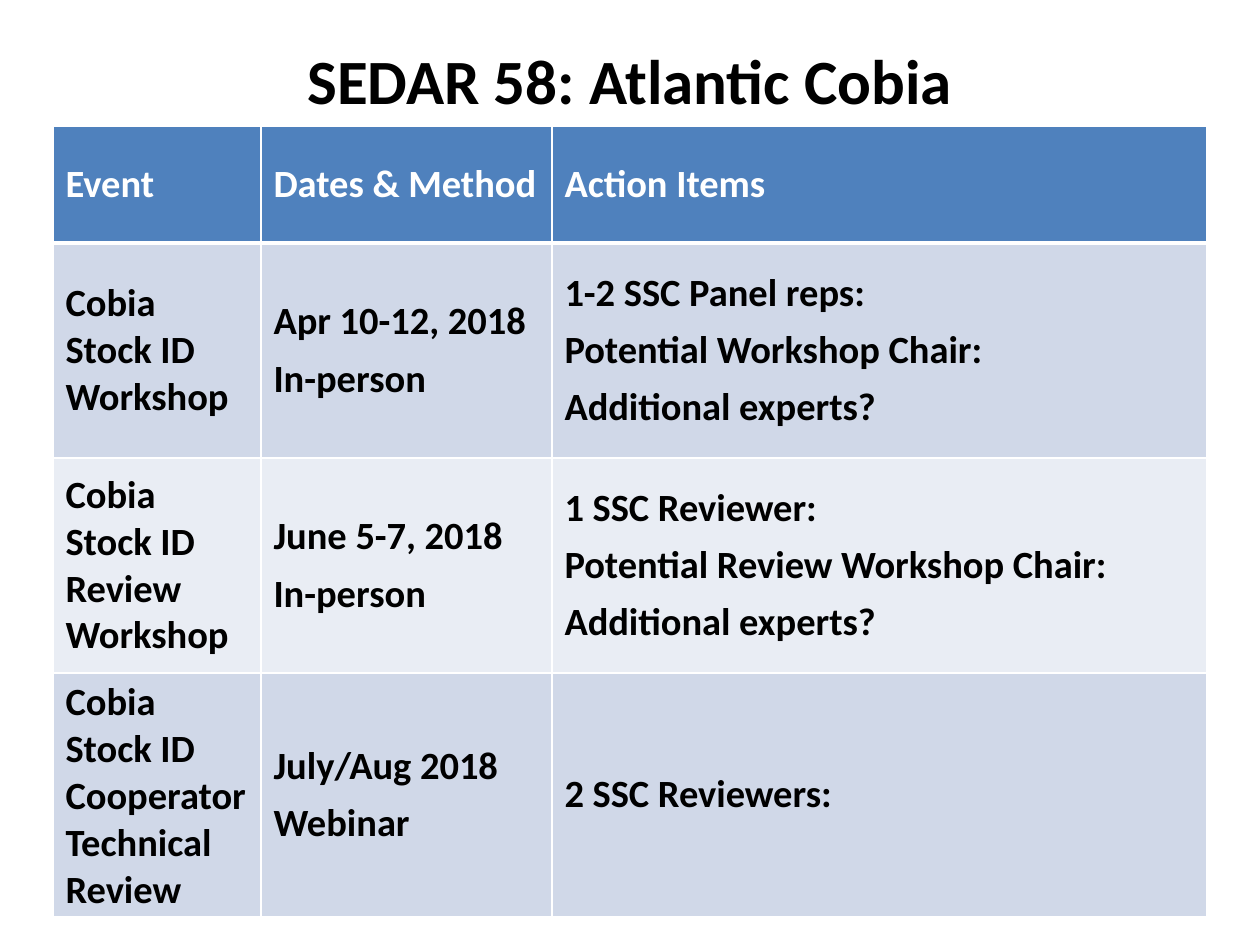
from dataclasses import dataclass

from lxml import etree
from pptx import Presentation
from pptx.dml.color import RGBColor
from pptx.enum.text import MSO_ANCHOR, PP_ALIGN
from pptx.oxml.ns import qn
from pptx.util import Emu, Pt

MIDDLE = MSO_ANCHOR.MIDDLE
CENTER, LEFT = PP_ALIGN.CENTER, PP_ALIGN.LEFT
EMU_PER_PX = 914400 // 126


@dataclass(frozen=True)
class Theme:
    font: str = "Calibri"
    title_size: int = 36
    table_size: int = 22
    text: str = "000000"
    header_text: str = "FFFFFF"
    header_fill: str = "4F81BD"
    bands: tuple = ("D0D8E8", "E9EDF4")
    border: str = "FFFFFF"
    border_width: int = 1
    header_rule: int = 3
    item_gap: int = 6


THEME = Theme()

TITLE = "SEDAR 58: Atlantic Cobia"
COLUMN_WIDTHS = (208, 291, 655)
ROW_HEIGHTS = (117, 215, 215, 215)
HEADER = ("Event", "Dates & Method", "Action Items")
EVENTS = (
    ("Cobia Stock ID Workshop",
     ("Apr 10-12, 2018", "In-person"),
     ("1-2 SSC Panel reps:", "Potential Workshop Chair:", "Additional experts?")),
    ("Cobia Stock ID Review Workshop",
     ("June 5-7, 2018", "In-person"),
     ("1 SSC Reviewer:", "Potential Review Workshop Chair:", "Additional experts?")),
    ("Cobia Stock ID Cooperator Technical Review",
     ("July/Aug 2018", "Webinar"),
     ("2 SSC Reviewers:",)),
)


def px(n):
    return Emu(n * EMU_PER_PX)


def write_lines(tf, lines, size, color, align=LEFT, gap=0):
    for i, line in enumerate(lines):
        p = tf.paragraphs[0] if i == 0 else tf.add_paragraph()
        p.alignment = align
        p.space_after = Pt(gap)
        r = p.add_run()
        r.text = line
        r.font.name = THEME.font
        r.font.size = Pt(size)
        r.font.bold = True
        r.font.color.rgb = RGBColor.from_string(color)


def add_title(s):
    sp = s.shapes.add_textbox(0, 0, px(1260), px(158))
    tf = sp.text_frame
    tf.word_wrap = True
    tf.vertical_anchor = MIDDLE
    write_lines(tf, [TITLE], THEME.title_size, THEME.text, CENTER)


def set_borders(cell, **widths):
    """Draw the L, R, T and B edges; a keyword overrides one edge's width."""
    tc_pr = cell._tc.get_or_add_tcPr()
    for side in "LRTB":
        width = widths.get(side, THEME.border_width)
        ln = etree.SubElement(tc_pr, qn(f"a:ln{side}"), w=str(Pt(width)))
        fill = etree.SubElement(ln, qn("a:solidFill"))
        etree.SubElement(fill, qn("a:srgbClr"), val=THEME.border)


def fill_cell(cell, lines, fill, color, gap=0, **borders):
    set_borders(cell, **borders)
    cell.fill.solid()
    cell.fill.fore_color.rgb = RGBColor.from_string(fill)
    cell.vertical_anchor = MIDDLE
    write_lines(cell.text_frame, lines, THEME.table_size, color, gap=gap)


def add_schedule(s):
    table = s.shapes.add_table(
        len(ROW_HEIGHTS), len(COLUMN_WIDTHS), px(53), px(126),
        px(sum(COLUMN_WIDTHS)), px(sum(ROW_HEIGHTS))).table
    for column, width in zip(table.columns, COLUMN_WIDTHS):
        column.width = px(width)
    for row, height in zip(table.rows, ROW_HEIGHTS):
        row.height = px(height)

    for col, label in enumerate(HEADER):
        fill_cell(table.cell(0, col), [label], THEME.header_fill,
                  THEME.header_text, B=THEME.header_rule)
    for row, (event, dates, actions) in enumerate(EVENTS, start=1):
        fill = THEME.bands[(row - 1) % len(THEME.bands)]
        top = THEME.header_rule if row == 1 else THEME.border_width
        fill_cell(table.cell(row, 0), [event], fill, THEME.text, T=top)
        for col, lines in enumerate((dates, actions), start=1):
            fill_cell(table.cell(row, col), lines, fill, THEME.text,
                      THEME.item_gap, T=top)


def main():
    prs = Presentation()
    prs.slide_width, prs.slide_height = px(1260), px(945)
    s = prs.slides.add_slide(prs.slide_layouts[6])
    add_title(s)
    add_schedule(s)
    prs.save("out.pptx")


if __name__ == "__main__":
    main()
